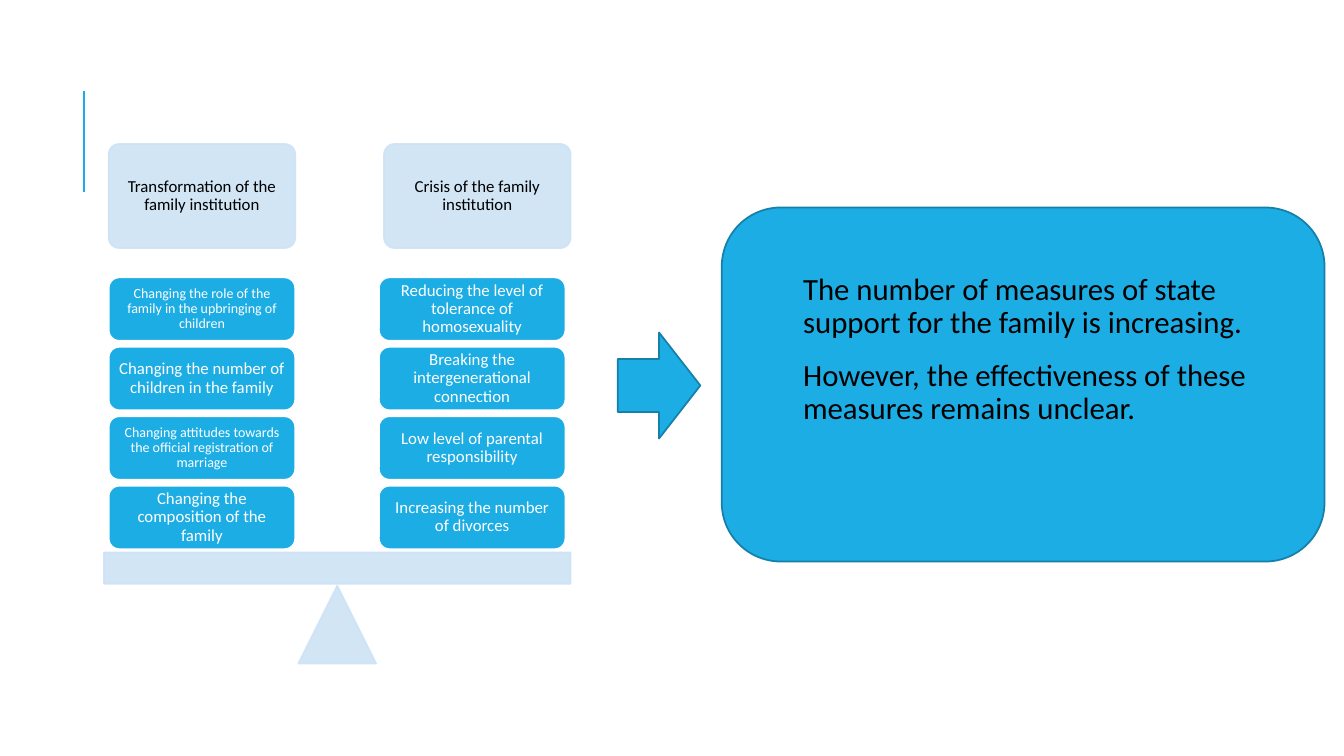
"""Build a slide weighing family transformation against family crisis."""
from dataclasses import dataclass

from lxml import etree
from pptx import Presentation
from pptx import util as u
from pptx.dml.color import RGBColor
from pptx.enum import shapes, text
from pptx.oxml.ns import qn


@dataclass(frozen=True)
class Theme:
    """Colours and type sizes of the slide."""
    font: str = "Calibri"
    accent: str = "1CADE4"
    edge: str = "1580A9"
    pale: str = "CDE3F5"
    light: str = "FFFFFF"
    dark: str = "000000"
    small: int = 10
    normal: int = 12
    large: int = 22
    rule: float = 1.5
    outline: float = 1.25


COLUMNS = [
    (2.74, 2.74, "Transformation of the family institution", [
        ("Changing the role of the family in the upbringing of children", "small"),
        ("Changing the number of children in the family", "normal"),
        ("Changing attitudes towards the official registration of marriage", "small"),
        ("Changing the composition of the family", "normal"),
    ]),
    (9.68, 9.55, "Crisis of the family institution", [
        ("Reducing the level of tolerance of homosexuality", "normal"),
        ("Breaking the intergenerational connection", "normal"),
        ("Low level of parental responsibility", "normal"),
        ("Increasing the number of divorces", "normal"),
    ]),
]
CONCLUSIONS = [
    "The number of measures of state support for the family is increasing.",
    "However, the effectiveness of these measures remains unclear.",
]
CARD_TOP, CARD_STEP = 6.99, 1.75


class Board:
    """Holds the theme and the current slide and draws its elements."""

    def __init__(self, theme, slide):
        """Keep the theme and drop the unused title."""
        self.theme = theme
        self.slide = slide
        title = slide.shapes.title.element
        title.getparent().remove(title)

    def apply(self, target, values):
        """Set each named attribute on the target."""
        for name, value in values.items():
            setattr(target, name, value)

    def fill_text(self, frame, lines, size, color, paragraph_format, inset=0.13):
        """Fill a text frame with formatted paragraphs."""
        margins = ("margin_left", "margin_right", "margin_top", "margin_bottom")
        self.apply(frame, dict.fromkeys(margins, u.Cm(inset)))
        self.apply(frame, {"word_wrap": True, "auto_size": text.MSO_AUTO_SIZE.NONE})
        frame.text = "\n".join(lines)
        for paragraph in frame.paragraphs:
            self.apply(paragraph, {"line_spacing": 0.9, **paragraph_format})
            font = paragraph.runs[0].font
            self.apply(font, {"name": self.theme.font, "size": u.Pt(size)})
            font.color.rgb = RGBColor.from_string(color)

    def block(self, kind, box, fill, line, alpha=None, corner=None):
        """Draw a filled preset shape."""
        block = self.slide.shapes.add_shape(kind, *map(u.Cm, box))
        block.shadow.inherit = False
        block.fill.solid()
        block.fill.fore_color.rgb = RGBColor.from_string(fill)
        block.line.color.rgb = RGBColor.from_string(line)
        block.line.width = u.Pt(self.theme.outline)
        if corner is not None:
            block.adjustments[0] = corner
        if alpha is not None:
            for color in block.element.spPr.iter(qn("a:srgbClr")):
                etree.SubElement(color, qn("a:alpha"), val=str(alpha * 1000))
        return block

    def pale_block(self, kind, box, corner=None):
        """Draw a slightly transparent part of the scale."""
        pale = self.theme.pale
        return self.block(kind, box, pale, pale, alpha=90, corner=corner)

    def label(self, block, caption, size, color):
        """Centre a caption inside a block."""
        frame = block.text_frame
        frame.vertical_anchor = text.MSO_ANCHOR.MIDDLE
        inset = 0.1 if size == self.theme.small else 0.13
        centred = {"alignment": text.PP_ALIGN.CENTER}
        self.fill_text(frame, [caption], size, color, centred, inset)

    def rule(self, start, end):
        """Draw a straight accent line."""
        rule = self.slide.shapes.add_connector(
            shapes.MSO_CONNECTOR.STRAIGHT, *map(u.Cm, start + end))
        rule.line.color.rgb = RGBColor.from_string(self.theme.accent)
        rule.line.width = u.Pt(self.theme.rule)
        etree.SubElement(rule.element.spPr, qn("a:effectLst"))

    def body(self, box, lines):
        """Place the body placeholder in front with its paragraphs."""
        body = self.slide.placeholders[1]
        places = zip(("left", "top", "width", "height"), map(u.Cm, box))
        self.apply(body, dict(places))
        body.element.getparent().append(body.element)
        frame = body.text_frame
        frame.vertical_anchor = text.MSO_ANCHOR.TOP
        spacing = {"alignment": text.PP_ALIGN.LEFT,
                   "space_before": u.Pt(12), "space_after": u.Pt(2)}
        self.fill_text(frame, lines, self.theme.large, self.theme.dark, spacing)
        for paragraph in frame.paragraphs:
            properties = paragraph._p.get_or_add_pPr()
            properties.set("marL", str(u.Cm(0.25)))
            properties.set("indent", str(u.Cm(-0.25)))
            etree.SubElement(properties, qn("a:buChar"), char=" ")


def main():
    """Assemble and save the slide."""
    theme = Theme()
    deck = Presentation()
    deck.slide_width, deck.slide_height = u.Cm(33.87), u.Cm(19.05)
    board = Board(theme, deck.slides.add_slide(deck.slide_layouts[1]))
    preset = shapes.MSO_SHAPE

    board.rule((2.11, 4.83), (2.11, 2.29))
    board.block(preset.ROUNDED_RECTANGLE, (18.19, 5.23, 15.19, 8.92),
                theme.accent, theme.edge)
    board.pale_block(preset.ISOSCELES_TRIANGLE, (7.52, 14.76, 1.96, 1.96))
    board.pale_block(preset.RECTANGLE, (2.62, 13.92, 11.76, 0.79))

    for heading_left, card_left, heading, cards in COLUMNS:
        pan = board.pale_block(preset.ROUNDED_RECTANGLE,
                               (heading_left, 3.63, 4.7, 2.62), corner=0.1)
        board.label(pan, heading, theme.normal, theme.dark)
        for row, (trend, size) in enumerate(cards):
            weight = board.block(
                preset.ROUNDED_RECTANGLE,
                (card_left, CARD_TOP + row * CARD_STEP, 4.7, 1.6),
                theme.accent, theme.light)
            board.label(weight, trend, getattr(theme, size), theme.light)

    board.body((19.86, 6.76, 11.84, 6.43), CONCLUSIONS)
    board.block(preset.RIGHT_ARROW, (15.57, 8.38, 2.08, 2.67),
                theme.accent, theme.edge)
    deck.save("out.pptx")


if __name__ == "__main__":
    main()
